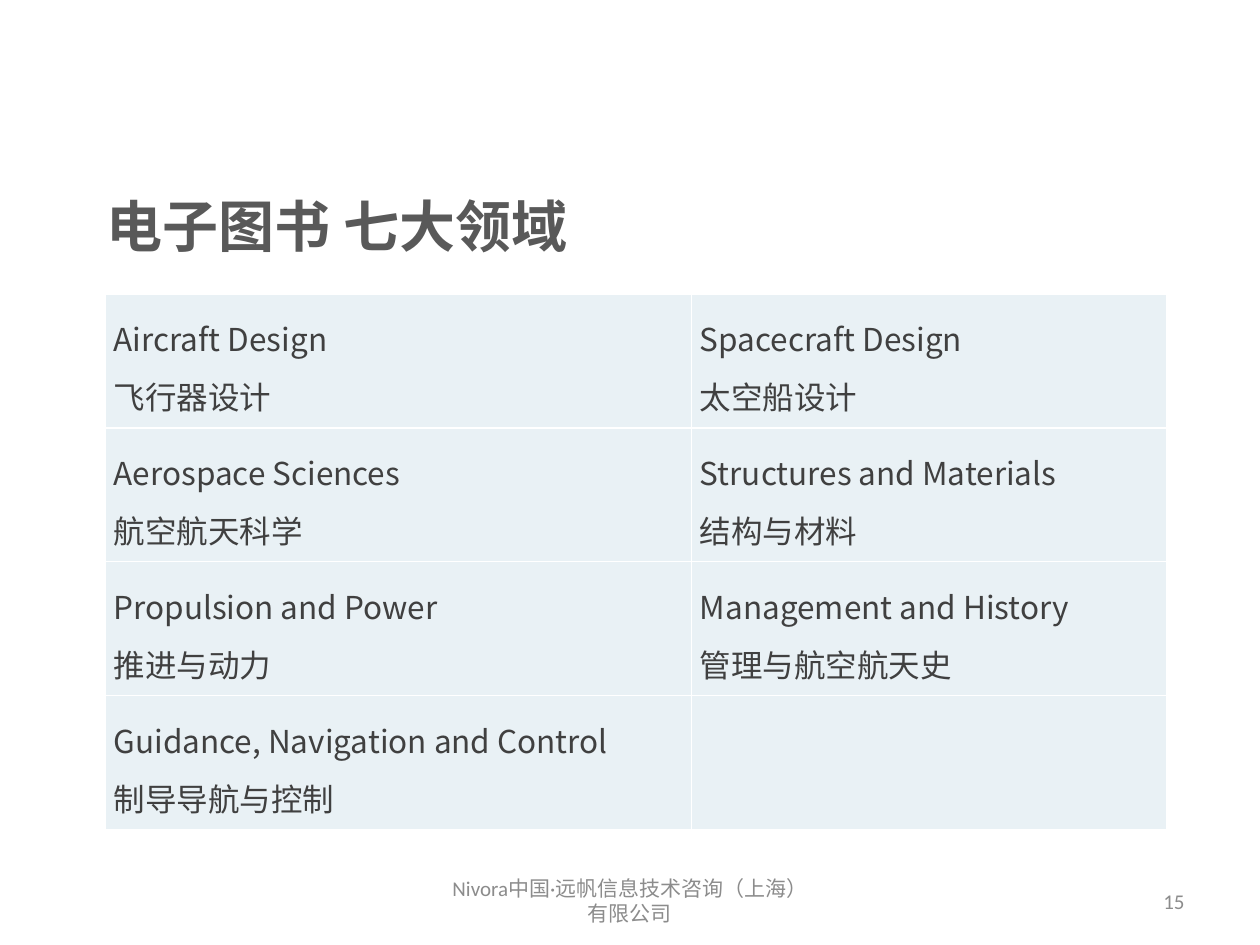
from dataclasses import dataclass

from lxml import etree
from pptx import Presentation
from pptx.dml.color import RGBColor
from pptx.enum.text import MSO_ANCHOR, PP_ALIGN
from pptx.oxml.ns import qn
from pptx.util import Pt

MIDDLE, TOP = MSO_ANCHOR.MIDDLE, MSO_ANCHOR.TOP
LEFT, CENTER, RIGHT, JUSTIFY = PP_ALIGN.LEFT, PP_ALIGN.CENTER, PP_ALIGN.RIGHT, PP_ALIGN.JUSTIFY


@dataclass(frozen=True)
class Theme:
    title: str = "595959"
    body: str = "404040"
    footer: str = "8C8C8C"
    cell: str = "E9F1F5"
    border: str = "FFFFFF"
    title_size: int = 32
    body_size: int = 18
    footer_size: int = 12
    main_font: str = "Noto Sans CJK SC"
    footer_font: str = "Calibri"


THEME = Theme()


def style_text(frame, font_name, size, color, align, bold=False):
    for paragraph in frame.paragraphs:
        paragraph.alignment = align
        for run in paragraph.runs:
            run.font.name = font_name
            run.font.size = Pt(size)
            run.font.bold = bold
            run.font.color.rgb = RGBColor.from_string(color)
            east_asian = etree.SubElement(run.font._element, qn("a:ea"))
            east_asian.set("typeface", THEME.main_font)


def add_borders(cell, color):
    """Draw a 1 pt line on all four sides; call before filling the cell."""
    properties = cell._tc.get_or_add_tcPr()
    for side in ("a:lnL", "a:lnR", "a:lnT", "a:lnB"):
        line = etree.SubElement(properties, qn(side), w=str(Pt(1)))
        fill = etree.SubElement(line, qn("a:solidFill"))
        etree.SubElement(fill, qn("a:srgbClr"), val=color)


prs = Presentation()
prs.slide_width, prs.slide_height = Pt(720), Pt(540)
slide = prs.slides.add_slide(prs.slide_layouts[6])

footer_style = (THEME.footer_font, THEME.footer_size, THEME.footer)
title_style = (THEME.main_font, THEME.title_size, THEME.title)
labels = [
    ("Nivora中国·远帆信息技术咨询（上海）有限公司", (246, 500.5, 228, 28.75), MIDDLE, footer_style, CENTER, False),
    ("15", (516, 500.5, 168, 28.75), MIDDLE, footer_style, RIGHT, False),
    ("电子图书 七大领域", (54, 106, 369, 49.5), TOP, title_style, LEFT, True),
]
for text, box, anchor, style, align, bold in labels:
    frame = slide.shapes.add_textbox(*map(Pt, box)).text_frame
    frame.word_wrap = True
    frame.vertical_anchor = anchor
    frame.text = text
    style_text(frame, *style, align, bold)

fields = [
    ("Aircraft Design", "飞行器设计"),
    ("Spacecraft Design", "太空船设计"),
    ("Aerospace Sciences", "航空航天科学"),
    ("Structures and Materials", "结构与材料"),
    ("Propulsion and Power", "推进与动力"),
    ("Management and History", "管理与航空航天史"),
    ("Guidance, Navigation and Control", "制导导航与控制"),
]
column_widths = (335, 271.5)
row_height = 76.5
row_count = 4
field_table = slide.shapes.add_table(
    row_count, len(column_widths), Pt(60), Pt(168), Pt(sum(column_widths)), Pt(row_height * row_count)
).table
field_table.first_row = field_table.horz_banding = False
for column, width in zip(field_table.columns, column_widths):
    column.width = Pt(width)
for row in field_table.rows:
    row.height = Pt(row_height)

for cell in field_table.iter_cells():
    add_borders(cell, THEME.border)
    cell.fill.solid()
    cell.fill.fore_color.rgb = RGBColor.from_string(THEME.cell)

for cell, names in zip(field_table.iter_cells(), fields):
    cell.vertical_anchor = MIDDLE
    cell.margin_left = cell.margin_right = Pt(5)
    cell.margin_top = cell.margin_bottom = Pt(0)
    cell.text_frame.text = "\n".join(names)
    style_text(cell.text_frame, THEME.main_font, THEME.body_size, THEME.body, JUSTIFY)
    for paragraph in cell.text_frame.paragraphs:
        paragraph.line_spacing = Pt(33)

prs.save("out.pptx")
